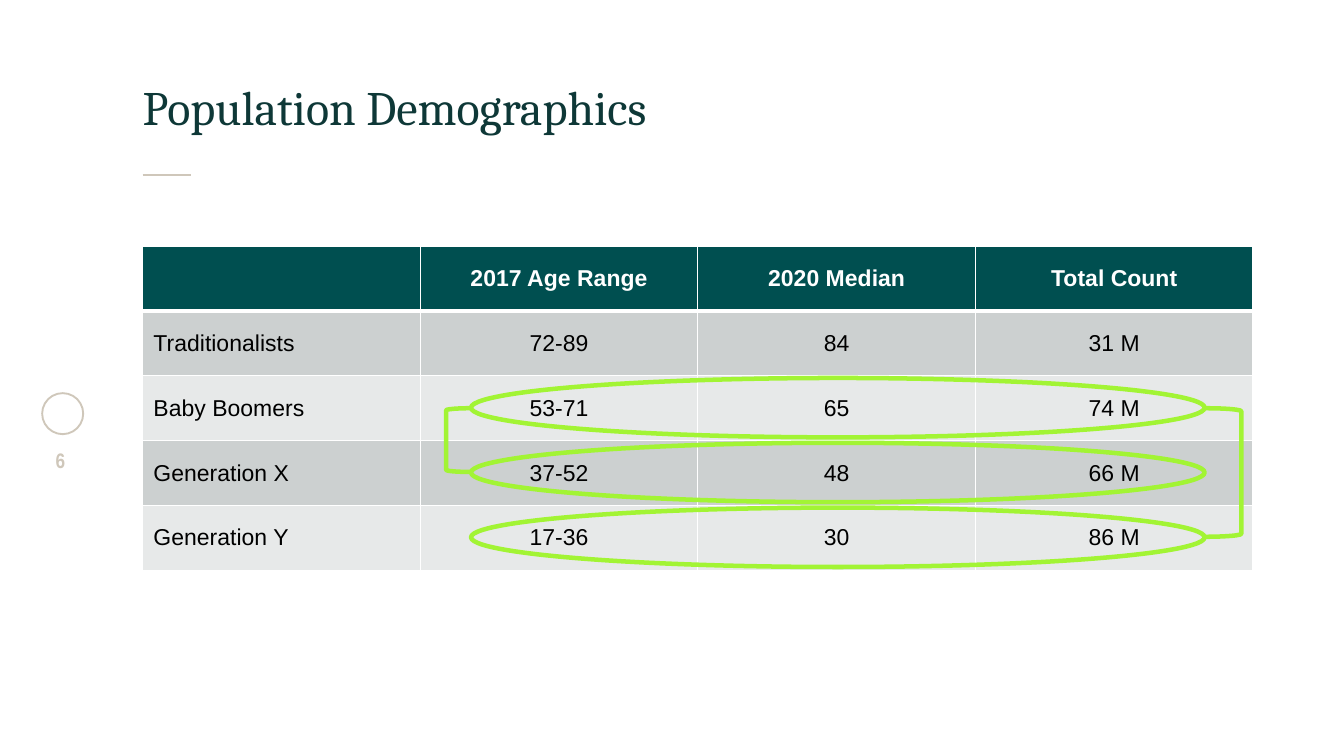
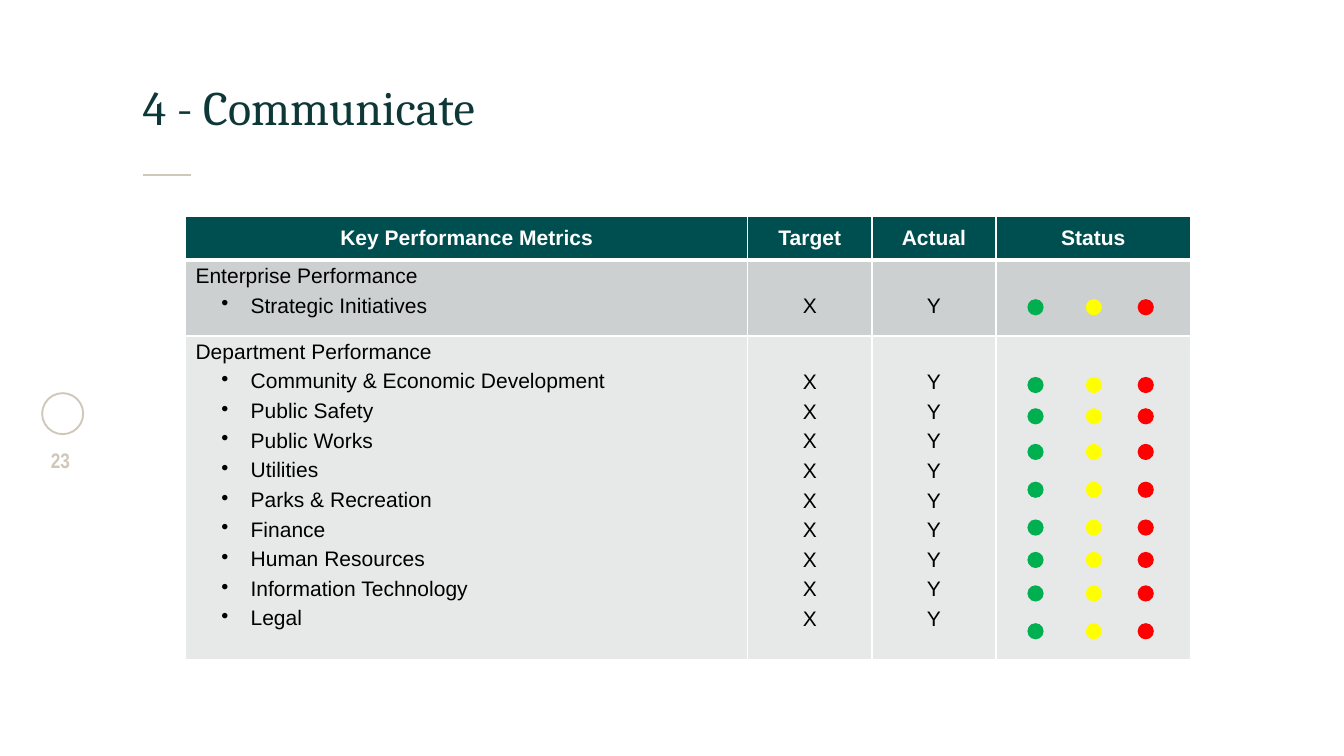
import lxml.etree
import pptx
import pptx.dml.color
import pptx.enum.shapes
import pptx.enum.text
import pptx.oxml.ns
import pptx.util

Inches = pptx.util.Inches
Pt = pptx.util.Pt
qn = pptx.oxml.ns.qn
SHAPE = pptx.enum.shapes.MSO_SHAPE
ALIGN = pptx.enum.text.PP_ALIGN
ANCHOR = pptx.enum.text.MSO_ANCHOR

WHITE, BLACK = "FFFFFF", "000000"
TITLE, HEADER, STONE, LIME = "0E3837", "004F50", "CFC7BA", "A2F434"
BANDS = ["CCD0D0", "E7E9E9"]
GREEN, YELLOW, RED = "00B050", "FFFF00", "FF0000"
LEFT, WIDTH = 1.32, 10.28


def rgb(color):
    return pptx.dml.color.RGBColor.from_string(color)


class Deck:
    """Holds the shared style and draws elements on the current slide."""

    def __init__(self):
        self.prs = pptx.Presentation()
        self.prs.slide_width, self.prs.slide_height = Inches(12.44), Inches(7)

    def slide(self, title, number):
        self.s = self.prs.slides.add_slide(self.prs.slide_layouts[6])
        self.shape(SHAPE.OVAL, 0.39, 3.64, 0.38, 0.38, line=STONE, weight=1.25)
        self.rule(LEFT, 1.62, 0.45)
        self.text(str(number), 0.35, 4.14, 0.42, 0.38, 14, "Arial Narrow", STONE,
                  bold=True, align=ALIGN.CENTER)
        self.text(title, LEFT, 0.5, WIDTH, 0.75, 32, "Cambria", TITLE,
                  anchor=ANCHOR.BOTTOM)

    def style(self, p, size, name, color, bold=False, align=ALIGN.LEFT):
        p.alignment = align
        p.font.size, p.font.name, p.font.bold = Pt(size), name, bold
        p.font.color.rgb = rgb(color)

    def text(self, text, x, y, w, h, size, name, color, bold=False,
             align=ALIGN.LEFT, anchor=ANCHOR.TOP):
        sp = self.s.shapes.add_textbox(Inches(x), Inches(y), Inches(w), Inches(h))
        tf = sp.text_frame
        tf.word_wrap, tf.vertical_anchor = True, anchor
        tf.margin_left = tf.margin_right = tf.margin_top = tf.margin_bottom = 0
        tf.text = text
        self.style(tf.paragraphs[0], size, name, color, bold, align)

    def shape(self, kind, x, y, w, h, fill=None, line=None, weight=3):
        sp = self.s.shapes.add_shape(kind, Inches(x), Inches(y), Inches(w), Inches(h))
        sp.shadow.inherit = False
        if fill:
            sp.fill.solid()
            sp.fill.fore_color.rgb = rgb(fill)
        else:
            sp.fill.background()
        if line:
            sp.line.color.rgb = rgb(line)
            sp.line.width = Pt(weight)
        else:
            sp.line.fill.background()

    def rule(self, x, y, w):
        line = self.s.shapes.add_connector(
            pptx.enum.shapes.MSO_CONNECTOR.STRAIGHT,
            Inches(x), Inches(y), Inches(x + w), Inches(y))
        line.line.color.rgb = rgb(STONE)
        line.line.width = Pt(1)
        lxml.etree.SubElement(line._element.spPr, qn("a:effectLst"))

    def table(self, x, y, cols, heights, rows, size):
        table = self.s.shapes.add_table(
            len(rows), len(cols), Inches(x), Inches(y),
            Inches(sum(cols)), Inches(sum(heights))).table
        table.horz_banding = False
        for column, w in zip(table.columns, cols):
            column.width = Inches(w)
        for i, (row, h) in enumerate(zip(rows, heights)):
            table.rows[i].height = Inches(h)
            for j, text in enumerate(row):
                cell = table.cell(i, j)
                self.cell(cell, HEADER if i == 0 else BANDS[(i - 1) % 2], i == 0)
                cell.text = text
                for p in cell.text_frame.paragraphs:
                    self.style(p, size, "Arial", BLACK if i else WHITE, i == 0,
                               ALIGN.CENTER if i == 0 or j else ALIGN.LEFT)
        return table

    def cell(self, cell, fill, header):
        cell.vertical_anchor = ANCHOR.MIDDLE
        cell.fill.solid()
        cell.fill.fore_color.rgb = rgb(fill)
        for i, side in enumerate(["lnL", "lnR", "lnT", "lnB"]):
            weight = 3 if header and side == "lnB" else 1
            ln = lxml.etree.Element(qn("a:" + side), w=str(Pt(weight)))
            solid = lxml.etree.SubElement(ln, qn("a:solidFill"))
            lxml.etree.SubElement(solid, qn("a:srgbClr"), val=WHITE)
            cell._tc.get_or_add_tcPr().insert(i, ln)

    def bullet(self, p):
        pPr = p._p.get_or_add_pPr()
        pPr.set("marL", str(Inches(0.51)))
        pPr.set("indent", str(Inches(-0.27)))
        bu = lxml.etree.Element(qn("a:buChar"), char="•")
        pPr.insert_element_before(bu, "a:tabLst", "a:defRPr", "a:extLst")

    def metrics(self, table, line_height):
        for cell in table.iter_cells():
            cell.margin_left = cell.margin_right = Inches(0.09)
            cell.margin_top = cell.margin_bottom = Inches(0.04)
        for row in list(table.rows)[1:]:
            for j, cell in enumerate(row.cells):
                cell.vertical_anchor = ANCHOR.TOP
                if j:
                    cell.margin_top = Inches(0.04 + line_height)
                for k, p in enumerate(cell.text_frame.paragraphs):
                    p.space_before = p.space_after = Pt(2)
                    if j == 0 and k:
                        self.bullet(p)


def demographics(deck):
    deck.slide("Population Demographics", 6)
    rows = [
        ["", "2017 Age Range", "2020 Median", "Total Count"],
        ["Traditionalists", "72-89", "84", "31 M"],
        ["Baby Boomers", "53-71", "65", "74 M"],
        ["Generation X", "37-52", "48", "66 M"],
        ["Generation Y", "17-36", "30", "86 M"],
    ]
    deck.table(LEFT, 2.28, [WIDTH / 4] * 4, [0.6] * 5, rows, 15.3)
    for i in range(3):
        deck.shape(SHAPE.OVAL, 4.36, 3.5 + 0.6 * i, 6.79, 0.55, line=LIME)
    deck.shape(SHAPE.LEFT_BRACKET, 4.13, 3.78, 0.23, 0.59, line=LIME)
    deck.shape(SHAPE.RIGHT_BRACKET, 11.16, 3.78, 0.33, 1.19, line=LIME)


def communicate(deck):
    deck.slide("4 - Communicate", 23)
    groups = [
        ["Enterprise Performance", "Strategic Initiatives"],
        ["Department Performance", "Community & Economic Development",
         "Public Safety", "Public Works", "Utilities", "Parks & Recreation",
         "Finance", "Human Resources", "Information Technology", "Legal"],
    ]
    rows = [["Key Performance Metrics", "Target", "Actual", "Status"]]
    for group in groups:
        count = len(group) - 1
        rows.append(["\n".join(group), "\n".join("X" * count),
                     "\n".join("Y" * count), ""])
    table = deck.table(1.72, 2, [5.2, 1.15, 1.15, 1.8], [0.41, 0.7, 3], rows, 14)
    deck.metrics(table, 0.28)
    dot_tops = [2.77, 3.49, 3.78, 4.11, 4.46, 4.81, 5.11, 5.42, 5.77]
    for x, color in [(9.51, GREEN), (10.05, YELLOW), (10.53, RED)]:
        for y in dot_tops:
            deck.shape(SHAPE.OVAL, x, y, 0.15, 0.15, fill=color)


def main():
    deck = Deck()
    demographics(deck)
    communicate(deck)
    deck.prs.save("out.pptx")


if __name__ == "__main__":
    main()
